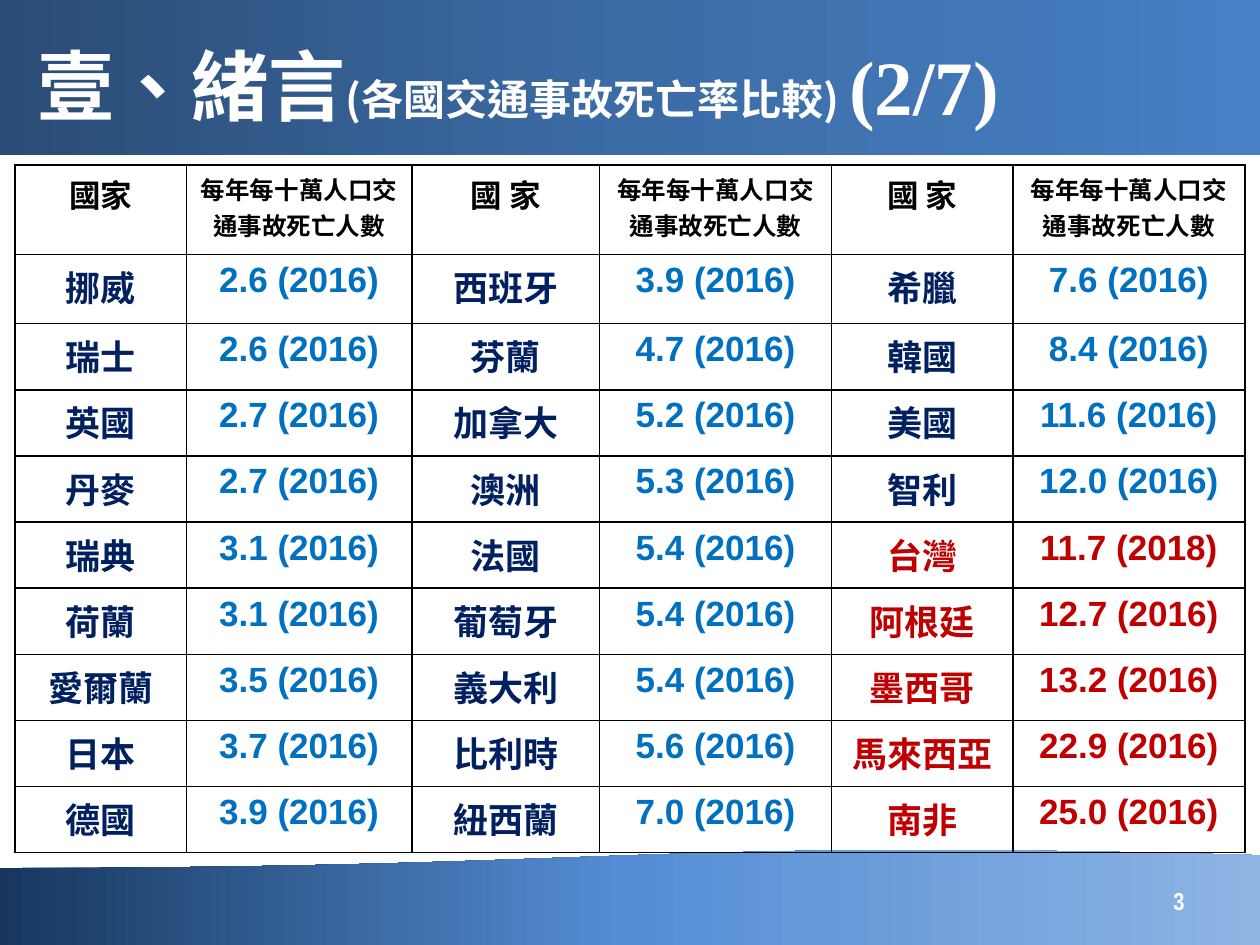
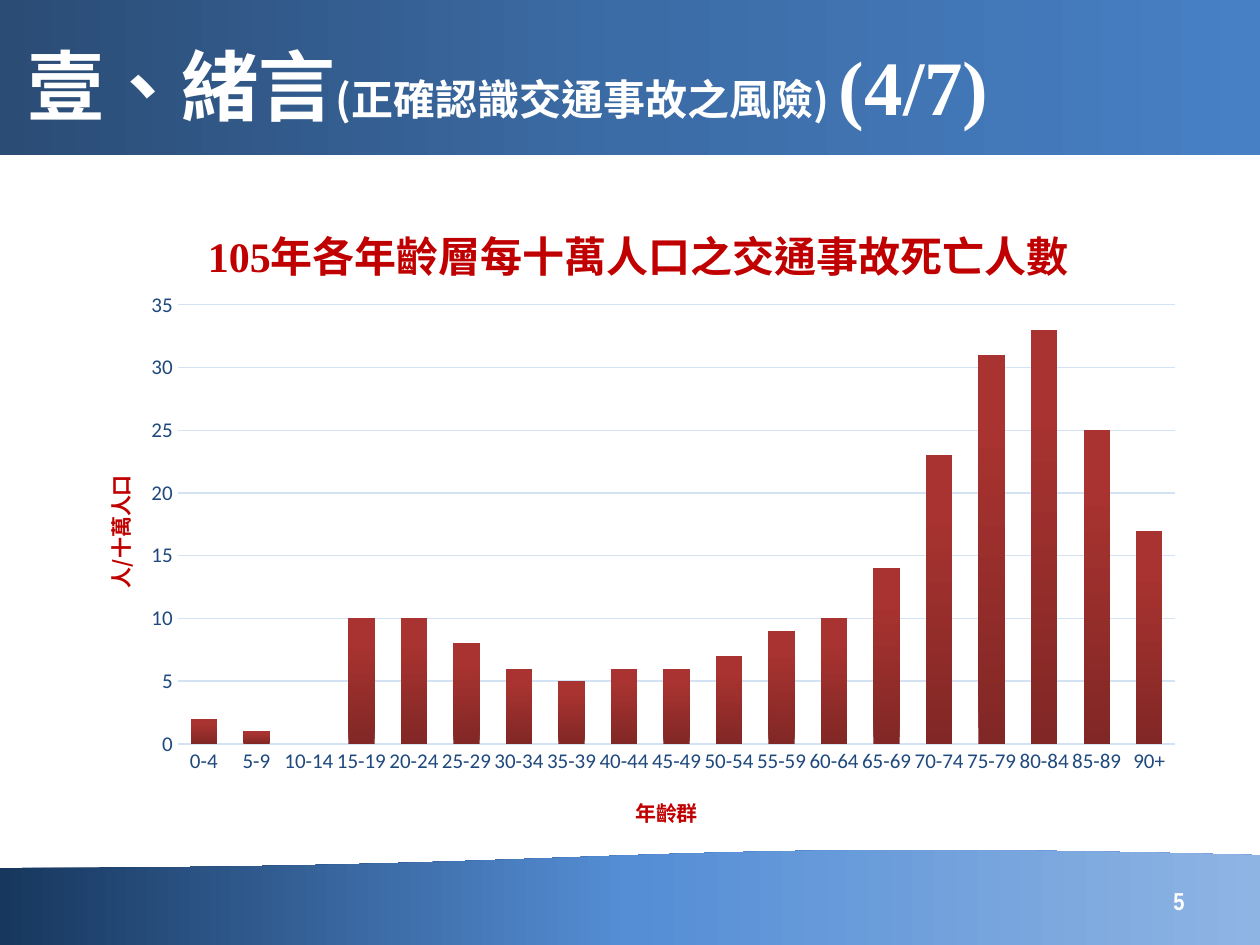
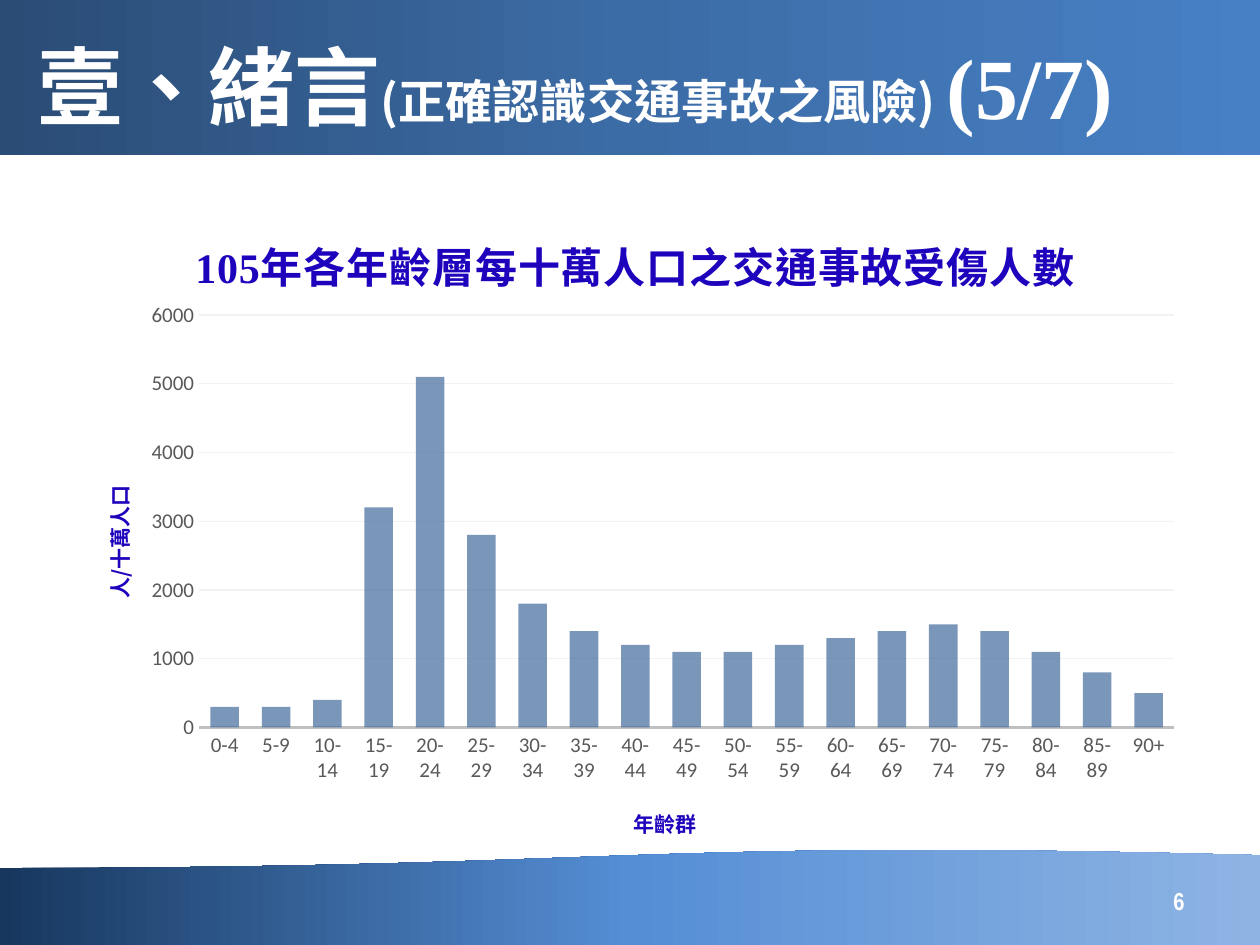
from copy import deepcopy

from lxml.etree import SubElement
from pptx import Presentation
from pptx.chart.data import CategoryChartData
from pptx.dml.color import RGBColor
from pptx.enum.chart import XL_CHART_TYPE as ChartType, XL_TICK_MARK as Tick
from pptx.enum.lang import MSO_LANGUAGE_ID as Lang
from pptx.enum.shapes import MSO_SHAPE as Shape
from pptx.enum.text import MSO_ANCHOR as Anchor, PP_ALIGN as Align
from pptx.oxml.ns import qn
from pptx.util import Pt

WHITE = RGBColor(0xFF, 0xFF, 0xFF)
BLACK = RGBColor(0, 0, 0)
NAVY = RGBColor(0x00, 0x20, 0x60)
BLUE = RGBColor(0x00, 0x70, 0xC0)
RED = RGBColor(0xC0, 0x00, 0x00)
VIOLET = RGBColor(0x1E, 0x03, 0xBD)
AXIS_BLUE = RGBColor(0x1F, 0x49, 0x7D)
PALE_BLUE = RGBColor(0xD4, 0xE3, 0xF4)
AXIS_GRAY = RGBColor(0x59, 0x59, 0x59)
LINE_GRAY = RGBColor(0xBF, 0xBF, 0xBF)
PALE_GRAY = RGBColor(0xF2, 0xF2, 0xF2)
STEEL = RGBColor(0x42, 0x6B, 0x9D)
HEADER_STOPS = [(0, RGBColor(0x2A, 0x4C, 0x75)), (0.5, RGBColor(0x3C, 0x6C, 0xA6)),
                (1, RGBColor(0x47, 0x80, 0xC5))]
FOOTER_STOPS = [(0, RGBColor(0x17, 0x37, 0x5E)), (0.5, RGBColor(0x55, 0x8E, 0xD5)),
                (1, RGBColor(0x8E, 0xB4, 0xE3))]
BAR_STOPS = [(0, RGBColor(0x81, 0x27, 0x25)), (0.8, RGBColor(0xA8, 0x33, 0x30)),
             (1, RGBColor(0xAB, 0x31, 0x2E))]

CJK, SERIF, SANS = "Noto Sans CJK SC", "Times New Roman", "Arial"
NARROW, AXIS_FONT = "Arial Narrow", "Calibri"

AGES = [f"{a}-{a + 4}" for a in range(0, 90, 5)] + ["90+"]
DEATHS = [2, 1, 0, 10, 10, 8, 6, 5, 6, 6, 7, 9, 10, 14, 23, 31, 33, 25, 17]
INJURIES = [300, 300, 400, 3200, 5100, 2800, 1800, 1400, 1200, 1100,
            1100, 1200, 1300, 1400, 1500, 1400, 1100, 800, 500]

RATE_HEAD = "每年每十萬人口交通事故死亡人數"
HEADINGS = ["國家", RATE_HEAD, "國 家", RATE_HEAD, "國 家", RATE_HEAD]
RATES = [
    ["挪威", "2.6 (2016)", "西班牙", "3.9 (2016)", "希臘", "7.6 (2016)"],
    ["瑞士", "2.6 (2016)", "芬蘭", "4.7 (2016)", "韓國", "8.4 (2016)"],
    ["英國", "2.7 (2016)", "加拿大", "5.2 (2016)", "美國", "11.6 (2016)"],
    ["丹麥", "2.7 (2016)", "澳洲", "5.3 (2016)", "智利", "12.0 (2016)"],
    ["瑞典", "3.1 (2016)", "法國", "5.4 (2016)", "台灣", "11.7 (2018)"],
    ["荷蘭", "3.1 (2016)", "葡萄牙", "5.4 (2016)", "阿根廷", "12.7 (2016)"],
    ["愛爾蘭", "3.5 (2016)", "義大利", "5.4 (2016)", "墨西哥", "13.2 (2016)"],
    ["日本", "3.7 (2016)", "比利時", "5.6 (2016)", "馬來西亞", "22.9 (2016)"],
    ["德國", "3.9 (2016)", "紐西蘭", "7.0 (2016)", "南非", "25.0 (2016)"],
]
FIRST_RED_ROW = 5


def style(r, size, color, font=CJK):
    f = r.font
    f.size, f.bold, f.name = Pt(size), True, font
    f.color.rgb = color
    f.language_id = Lang.TRADITIONAL_CHINESE
    SubElement(r._r.get_or_add_rPr(), qn("a:ea"), typeface=CJK)


def fill_gradient(fill, stops, angle):
    fill.gradient()
    fill.gradient_angle = angle
    gs = fill.gradient_stops[0]._gs
    gs.getparent().append(deepcopy(gs))
    for stop, (position, color) in zip(fill.gradient_stops, stops):
        stop.position = position
        stop.color.rgb = color


def add_band(s, shape, box, stops, angle, rotation=0):
    sp = s.shapes.add_shape(shape, *map(Pt, box))
    sp.rotation = rotation
    sp.shadow.inherit = False
    sp.line.fill.background()
    fill_gradient(sp.fill, stops, angle)


def add_text(s, box, runs, align=Align.LEFT):
    tf = s.shapes.add_textbox(*map(Pt, box)).text_frame
    tf.word_wrap = True
    tf.vertical_anchor = Anchor.MIDDLE
    p = tf.paragraphs[0]
    p.alignment = align
    for text, size, font in runs:
        r = p.add_run()
        r.text = text
        style(r, size, WHITE, font)


def add_frame(prs, topic, part, number, title_left=14.4, big=44, small=24):
    s = prs.slides.add_slide(prs.slide_layouts[6])
    add_band(s, Shape.FLOWCHART_DOCUMENT, (0, 485, 720, 55.4), FOOTER_STOPS, 180, 180)
    add_band(s, Shape.RECTANGLE, (0, 0, 720, 88.6), HEADER_STOPS, 0)
    add_text(s, (title_left, 15.1, 698, 67),
             [("壹、緒言", big, CJK), (f"({topic}) ", small, CJK), (f"({part}/7)", big, SERIF)])
    add_text(s, (516.2, 500.4, 167.8, 28.8), [(str(number), 14, NARROW)], Align.RIGHT)
    return s


def fill_cell(cell, text, size, color, font):
    cell.fill.background()
    p = cell.text_frame.paragraphs[0]
    p.text = text
    p.alignment = Align.CENTER
    style(p.runs[0], size, color, font)
    tcPr = cell._tc.get_or_add_tcPr()
    for i, side in enumerate("LRTB"):
        ln = SubElement(tcPr, qn(f"a:ln{side}"), w=str(Pt(1)))
        solid = SubElement(ln, qn("a:solidFill"))
        SubElement(solid, qn("a:srgbClr"), val=str(BLACK))
        tcPr.insert(i, ln)


def add_rate_table(s, x, y):
    widths = [97.9, 128.9, 107.3, 132.5, 103.7, 132.5]
    heights = [51.1, 39.6] + [37.8] * 8
    frame = s.shapes.add_table(len(heights), len(widths), Pt(x), Pt(y),
                               Pt(sum(widths)), Pt(sum(heights)))
    table = frame.table
    table.first_row = table.horz_banding = False
    for column, width in zip(table.columns, widths):
        column.width = Pt(width)
    for row, height in zip(table.rows, heights):
        row.height = Pt(height)
    for c, text in enumerate(HEADINGS):
        fill_cell(table.cell(0, c), text, 14 if c % 2 else 18, BLACK, CJK)
    for i, rates in enumerate(RATES, 1):
        for c, text in enumerate(rates):
            color = BLUE if c % 2 else NAVY
            if c >= 4 and i >= FIRST_RED_ROW:
                color = RED
            fill_cell(table.cell(i, c), text, 20, color, SANS if c % 2 else CJK)


def place(element, **fractions):
    layout = element.find(qn("c:layout"))
    if layout is None:
        layout = SubElement(element, qn("c:layout"))
        element.insert(0, layout)
    manual = SubElement(layout, qn("c:manualLayout"))
    if "w" in fractions:
        SubElement(manual, qn("c:layoutTarget"), val="inner")
    for mode in ("xMode", "yMode"):
        SubElement(manual, qn(f"c:{mode}"), val="edge")
    for name, value in fractions.items():
        SubElement(manual, qn(f"c:{name}"), val=str(value))


def set_title(title, text, size, color, font, x, y):
    p = title.text_frame.paragraphs[0]
    p.text = text
    style(p.runs[0], size, color, font)
    place(title._element, x=x, y=y)
    return p.runs[0]


def add_age_chart(s, box, values, title, title_x, color, label_color, line, grid_color,
                  top, step, gap, overlap, plot_box, label_rotation):
    data = CategoryChartData()
    data.categories = AGES
    data.add_series("Series 1", values)
    chart = s.shapes.add_chart(ChartType.COLUMN_CLUSTERED, *map(Pt, box), data).chart
    chart.has_legend = False
    chart.font.size, chart.font.name = Pt(10), AXIS_FONT
    chart.font.color.rgb = BLACK
    chart.has_title = True
    heading = set_title(chart.chart_title, title, 24, color, SERIF, title_x, 0.04)
    place(chart._chartSpace.find(".//" + qn("c:plotArea")), **dict(zip("xywh", plot_box)))

    ages, rate = chart.category_axis, chart.value_axis
    for axis in (ages, rate):
        axis.major_tick_mark = axis.minor_tick_mark = Tick.NONE
        f = axis.tick_labels.font
        f.size, f.name = Pt(12), AXIS_FONT
        f.color.rgb = label_color
    set_title(ages.axis_title, "年齡群", 12, color, CJK, 0.5, 0.91)
    set_title(rate.axis_title, "人/十萬人口", 12, color, CJK, 0.03, 0.43)
    rate.axis_title.text_frame._txBody.bodyPr.set("rot", "-5400000")
    ages._element.find(qn("c:txPr")).find(qn("a:bodyPr")).set("rot", label_rotation)
    ages.format.line.color.rgb, ages.format.line.width = line[0], Pt(line[1])
    rate.format.line.fill.background()
    rate.minimum_scale, rate.maximum_scale, rate.major_unit = 0, top, step
    grid = rate.major_gridlines.format.line
    grid.color.rgb, grid.width = grid_color, Pt(0.75)

    plot = chart.plots[0]
    plot.vary_by_categories = False
    plot.gap_width, plot.overlap = gap, overlap
    return plot.series[0], heading


def rate_slide(prs):
    s = add_frame(prs, "各國交通事故死亡率比較", 2, 3)
    add_rate_table(s, 8.6, 94.3)


def death_slide(prs):
    s = add_frame(prs, "正確認識交通事故之風險", 4, 5, title_left=8.6)
    bars, _ = add_age_chart(
        s, (36.7, 105.8, 648, 380.2), DEATHS, "105年各年齡層每十萬人口之交通事故死亡人數", 0.12,
        RED, AXIS_BLUE, (PALE_BLUE, 0.75), PALE_BLUE, 35, 5, 100, -24,
        (0.1, 0.18, 0.88, 0.66), "-60000000")
    fill_gradient(bars.format.fill, BAR_STOPS, 90)


def injury_slide(prs):
    s = add_frame(prs, "正確認識交通事故之風險", 5, 6, big=49, small=27)
    bars, heading = add_age_chart(
        s, (36, 111.6, 648, 380.2), INJURIES, "105年各年齡層每十萬人口之交通事故受傷人數", 0.11,
        VIOLET, AXIS_GRAY, (LINE_GRAY, 1.25), PALE_GRAY, 6000, 1000, 80, 25,
        (0.12, 0.18, 0.86, 0.62), "0")
    heading._r.get_or_add_rPr().set("spc", "50")
    bars.format.fill.solid()
    bars.format.fill.fore_color.rgb = STEEL
    SubElement(bars._element.find(".//" + qn("a:srgbClr")), qn("a:alpha"), val="70000")


def main():
    prs = Presentation()
    prs.slide_width, prs.slide_height = Pt(720), Pt(540)
    rate_slide(prs)
    death_slide(prs)
    injury_slide(prs)
    prs.save("out.pptx")


if __name__ == "__main__":
    main()
